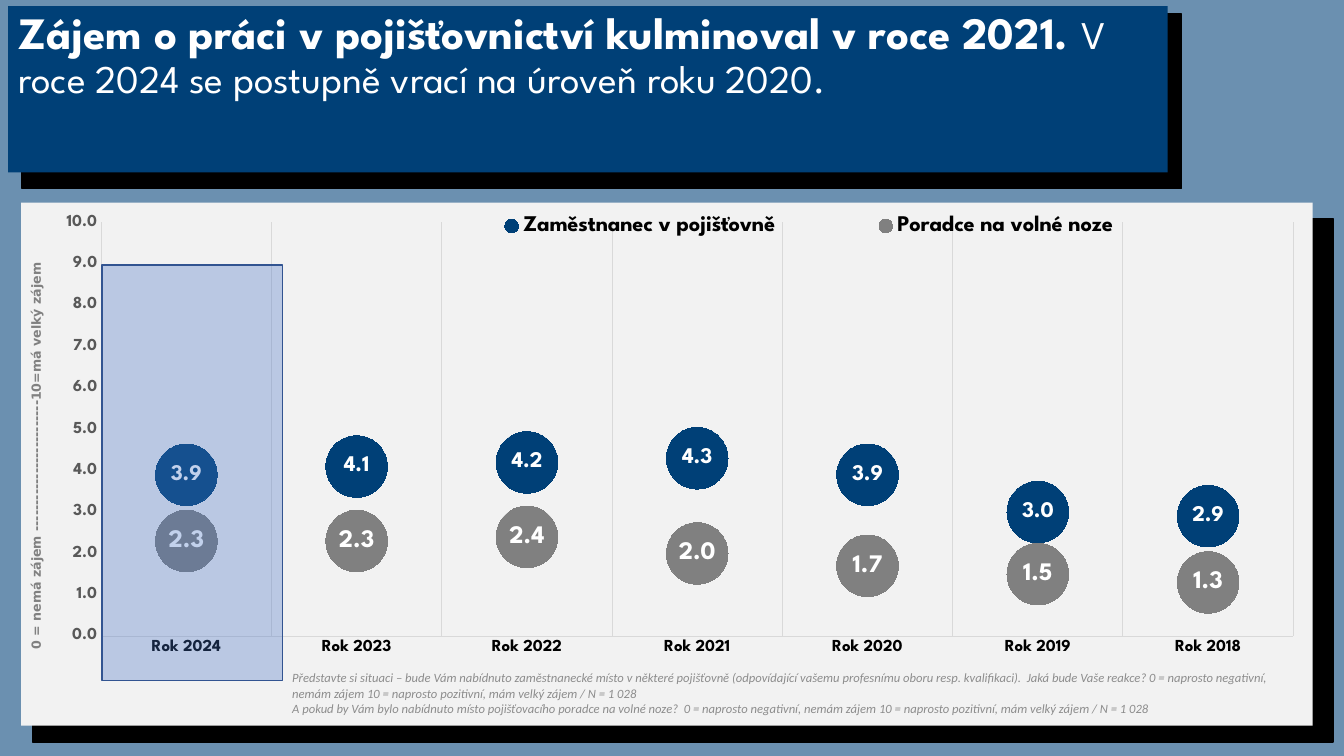
from dataclasses import dataclass

from lxml import etree
from pptx import Presentation
from pptx.chart.data import CategoryChartData
from pptx.dml.color import RGBColor
from pptx.enum.chart import (XL_CHART_TYPE, XL_LABEL_POSITION, XL_LEGEND_POSITION,
                             XL_MARKER_STYLE, XL_TICK_MARK)
from pptx.enum.shapes import MSO_SHAPE
from pptx.enum.text import MSO_ANCHOR, MSO_AUTO_SIZE, PP_ALIGN
from pptx.oxml import parse_xml
from pptx.oxml.ns import nsdecls, qn
from pptx.util import Inches, Pt

NAVY, GREY, WHITE, BLACK = "004077", "808080", "FFFFFF", "000000"
PALE_LINE = "D9D9D9"
HEADING_FONT = "League Spartan"
NUMBER_FORMAT = "###0.0"


@dataclass
class Panel:
    left: float
    top: float
    width: float
    height: float
    fill: str
    line: str | None = None
    opacity: int = 100


@dataclass
class Interest:
    name: str
    values: tuple[float, ...]
    color: str
    label_size: int


BACKDROP = Panel(0, 0, 13.33, 7.5, NAVY, opacity=58)
CHART_SHADOW = Panel(0.32, 2.17, 12.9, 5.19, BLACK, BLACK)
TITLE_SHADOW = Panel(0.22, 0.14, 11.5, 1.73, BLACK, BLACK)
CURRENT_YEAR = Panel(1.01, 2.63, 1.79, 4.12, "4472C4", "325491", 32)

YEARS = [f"Rok {year}" for year in range(2024, 2017, -1)]
INTERESTS = [
    Interest("Zaměstnanec v pojišťovně", (3.9, 4.1, 4.2, 4.3, 3.9, 3.0, 2.9), NAVY, 16),
    Interest("Poradce na volné noze", (2.3, 2.3, 2.4, 2.0, 1.7, 1.5, 1.3), GREY, 18),
]
QUESTIONS = [
    "Představte si situaci – bude Vám nabídnuto zaměstnanecké místo v některé pojišťovně "
    "(odpovídající vašemu profesnímu oboru resp. kvalifikaci).  Jaká bude Vaše reakce? "
    "0 = naprosto negativní, nemám zájem 10 = naprosto pozitivní, mám velký zájem / N = 1 028",
    "A pokud by Vám bylo nabídnuto místo pojišťovacího poradce na volné noze?  "
    "0 = naprosto negativní, nemám zájem 10 = naprosto pozitivní, mám velký zájem / N = 1 028",
]


def rgb(color: str) -> RGBColor:
    return RGBColor.from_string(color)


def paint(fill, color: str) -> None:
    fill.solid()
    fill.fore_color.rgb = rgb(color)


def style_font(font, size: float, color: str, name: str = HEADING_FONT,
               bold: bool = True, italic: bool = False) -> None:
    font.size, font.name = Pt(size), name
    font.bold, font.italic = bold, italic
    font.color.rgb = rgb(color)


def add_span(para, text: str, **style) -> None:
    span = para.add_run()
    span.text = text
    style_font(span.font, **style)


def place(shape, left: float, top: float, width: float, height: float) -> None:
    shape.left, shape.top = Inches(left), Inches(top)
    shape.width, shape.height = Inches(width), Inches(height)


def add_panel(page, panel: Panel) -> None:
    box = page.shapes.add_shape(MSO_SHAPE.RECTANGLE, Inches(panel.left), Inches(panel.top),
                                Inches(panel.width), Inches(panel.height))
    box.shadow.inherit = False
    paint(box.fill, panel.fill)
    if panel.line:
        paint(box.line.fill, panel.line)
        box.line.width = Pt(1)
    else:
        box.line.fill.background()
    if panel.opacity < 100:
        color = box.fill._xPr.find(qn("a:solidFill"))[0]
        etree.SubElement(color, qn("a:alpha"), val=str(panel.opacity * 1000))


def add_text_box(page, left: float, top: float, width: float, height: float,
                 lines: list[str], **style):
    box = page.shapes.add_textbox(Inches(left), Inches(top), Inches(width), Inches(height))
    frame = box.text_frame
    frame.word_wrap = True
    frame.vertical_anchor = MSO_ANCHOR.MIDDLE
    for index, line in enumerate(lines):
        para = frame.add_paragraph() if index else frame.paragraphs[0]
        add_span(para, line, **style)
    return box


def set_layout(parent, before: str | None, bounds: tuple[float, ...], inner: bool = False) -> None:
    """Give a chart part a fixed place, in fractions of the chart."""
    for layout in parent.findall(qn("c:layout")):
        parent.remove(layout)
    target = '<c:layoutTarget val="inner"/>' if inner else ""
    modes = '<c:xMode val="edge"/><c:yMode val="edge"/>'
    sizes = "".join(f'<c:{key} val="{value}"/>' for key, value in zip("xywh", bounds))
    layout = parse_xml(f'<c:layout {nsdecls("c")}><c:manualLayout>{target}{modes}{sizes}'
                       '</c:manualLayout></c:layout>')
    (parent.find(qn(before)) if before else parent[0]).addprevious(layout)


def style_axes(chart) -> None:
    years, scale = chart.category_axis, chart.value_axis
    for axis, color in ((years, BLACK), (scale, "595959")):
        axis.major_tick_mark = axis.minor_tick_mark = XL_TICK_MARK.NONE
        style_font(axis.tick_labels.font, 12, color)
    years.has_major_gridlines = True
    for line in (years.format.line, years.major_gridlines.format.line):
        paint(line.fill, PALE_LINE)
        line.width = Pt(0.75)
    scale.has_major_gridlines = False
    scale.format.line.fill.background()
    scale.minimum_scale, scale.maximum_scale, scale.major_unit = 0, 10, 1
    scale.tick_labels.number_format = NUMBER_FORMAT
    scale.tick_labels.number_format_is_linked = False


def style_series(series, interest: Interest) -> None:
    series.smooth = False
    series.format.line.fill.background()
    marker = series.marker
    marker.style, marker.size = XL_MARKER_STYLE.CIRCLE, 44
    paint(marker.format.fill, interest.color)
    marker.format.line.fill.background()
    labels = series.data_labels
    labels.show_value = True
    labels.position = XL_LABEL_POSITION.CENTER
    labels.number_format, labels.number_format_is_linked = NUMBER_FORMAT, False
    style_font(labels.font, interest.label_size, WHITE)


def add_interest_chart(page) -> None:
    data = CategoryChartData(number_format=NUMBER_FORMAT)
    data.categories = YEARS
    for interest in INTERESTS:
        data.add_series(interest.name, interest.values)
    chart = page.shapes.add_chart(XL_CHART_TYPE.LINE_MARKERS, Inches(0.21), Inches(2.01),
                                  Inches(12.81), Inches(5.19), data).chart
    style_font(chart.font, 10, BLACK)
    chart.has_title = False
    chart.plots[0].vary_by_categories = False
    style_axes(chart)
    for series, interest in zip(chart.plots[0].series, INTERESTS):
        style_series(series, interest)

    chart.has_legend = True
    legend = chart.legend
    legend.position = XL_LEGEND_POSITION.BOTTOM
    legend.include_in_layout = False
    style_font(legend.font, 16, BLACK)
    set_layout(legend._element, "c:overlay", (0.3, 0.01, 0.62, 0.07))

    body = chart._chartSpace.find(qn("c:chart"))
    set_layout(body.find(qn("c:plotArea")), None, (0.062, 0.038, 0.923, 0.791), inner=True)
    body.addnext(parse_xml(
        f'<c:spPr {nsdecls("c", "a")}><a:solidFill><a:srgbClr val="F2F2F2"/></a:solidFill>'
        '<a:ln><a:noFill/></a:ln></c:spPr>'))


def add_title(page) -> None:
    title = page.shapes.title
    place(title, 0.08, 0.06, 11.5, 1.65)
    paint(title.fill, NAVY)
    frame = title.text_frame
    frame.word_wrap = True
    frame.auto_size = MSO_AUTO_SIZE.NONE
    frame.vertical_anchor = MSO_ANCHOR.TOP
    para = frame.paragraphs[0]
    para.alignment, para.line_spacing = PP_ALIGN.LEFT, 0.9
    add_span(para, "Zájem o práci v pojišťovnictví kulminoval v roce 2021. ", size=32, color=WHITE)
    add_span(para, "V roce 2024 se postupně vrací na úroveň roku 2020.",
             size=28, color=WHITE, bold=False)
    page.shapes._spTree.append(title._element)


def main() -> None:
    deck = Presentation()
    deck.slide_width, deck.slide_height = Inches(13.33), Inches(7.5)
    page = deck.slides.add_slide(deck.slide_layouts[5])
    for panel in (BACKDROP, CHART_SHADOW, TITLE_SHADOW):
        add_panel(page, panel)
    add_interest_chart(page)
    add_title(page)
    add_text_box(page, 2.8, 6.54, 9.94, 0.67, QUESTIONS,
                 size=9, color="8C8C8C", name="Calibri", bold=False, italic=True)
    scale_note = add_text_box(page, -1.79, 4.27, 4.29, 0.25,
                              ["0 = nemá zájem -------------------------10=má velký zájem"],
                              size=9, color=GREY, name="DejaVu Sans")
    scale_note.rotation = 270
    add_panel(page, CURRENT_YEAR)
    deck.save("out.pptx")


if __name__ == "__main__":
    main()
